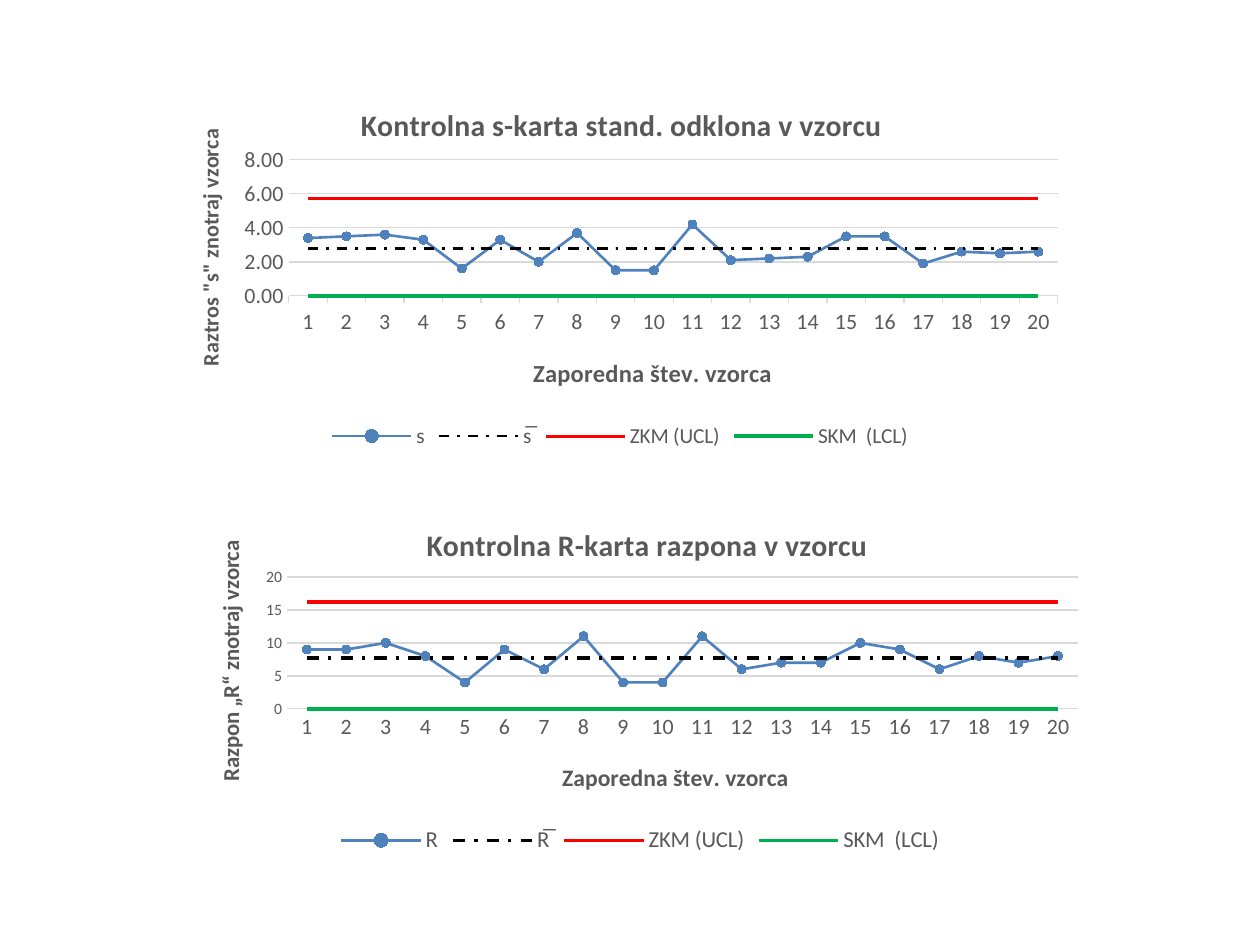
import dataclasses

import pptx
import pptx.chart.data
import pptx.dml.color
import pptx.enum.chart
import pptx.enum.dml
import pptx.oxml
import pptx.oxml.ns
import pptx.util

Pt = pptx.util.Pt
RGB = pptx.dml.color.RGBColor.from_string
XL = pptx.enum.chart


@dataclasses.dataclass(frozen=True)
class Theme:
    font: str = "Calibri"
    text: str = "595959"
    grid: str = "D9D9D9"
    sample: str = "4F81BD"
    mean: str = "000000"
    upper: str = "FF0000"
    lower: str = "00B050"
    title_size: float = 17
    category_size: float = 12.5
    hairline: float = 0.75
    marker_size: int = 5


THEME = Theme()
SAMPLES = [str(number) for number in range(1, 21)]

S_CARD = {
    "box": (93.6, 43.2, 521.3, 216),
    "plot": (0.137, 0.223, 0.843, 0.36),
    "title": ("Kontrolna s-karta stand. odklona v vzorcu", THEME.title_size, (0.21, 0.06)),
    "category_title": ("Zaporedna štev. vzorca", 14, (0.4, 0.73)),
    "value_title": ('Raztros "s" znotraj vzorca', 12.6, (0.03, 0.13)),
    "symbols": ("s", "s̅"),
    "values": [3.4, 3.5, 3.6, 3.3, 1.6, 3.3, 2, 3.7, 1.5, 1.5,
               4.2, 2.1, 2.2, 2.3, 3.5, 3.5, 1.9, 2.6, 2.5, 2.6],
    "limits": (2.8, 5.7, 0),
    "widths": (1.5, 1.5, 1.75, 2.5),
    "scale": {"minimum_scale": 0, "maximum_scale": 8, "major_unit": 2},
    "number_format": "0.00",
    "category_tick": XL.XL_TICK_MARK.OUTSIDE,
    "value_size": 12.5,
    "legend_size": 12.2,
}
R_CARD = {
    "box": (105.1, 281.5, 521.3, 209.5),
    "plot": (0.113, 0.23, 0.867, 0.36),
    "title": ("Kontrolna R-karta razpona v vzorcu", THEME.title_size, (0.26, 0.07)),
    "category_title": ("Zaporedna štev. vzorca", 13.5, (0.41, 0.72)),
    "value_title": ("Razpon „R“ znotraj vzorca", 13, (0.03, 0.12)),
    "symbols": ("R", "R̅"),
    "values": [9, 9, 10, 8, 4, 9, 6, 11, 4, 4, 11, 6, 7, 7, 10, 9, 6, 8, 7, 8],
    "limits": (7.7, 16.2, 0),
    "widths": (1.5, 1.75, 1.75, 2),
    "scale": {"minimum_scale": 0, "maximum_scale": 20, "major_unit": 5},
    "number_format": "General",
    "category_tick": XL.XL_TICK_MARK.NONE,
    "value_size": 9,
    "legend_size": 13,
}


def apply(target, formats):
    for attribute, value in formats.items():
        setattr(target, attribute, value)


def style_font(font, size, bold=False):
    apply(font, {"name": THEME.font, "size": Pt(size), "bold": bold})
    font.color.rgb = RGB(THEME.text)


def style_line(line, color, width):
    line.color.rgb = RGB(color)
    line.width = Pt(width)


def set_layout(element, index, fractions, inner=False):
    for old in element.findall(pptx.oxml.ns.qn("c:layout")):
        element.remove(old)
    parts = ["layoutTarget val='inner'"] if inner else []
    parts += ["xMode val='edge'", "yMode val='edge'"]
    parts += [f"{key} val='{value}'" for key, value in zip("xywh", fractions)]
    children = "".join(f"<c:{part}/>" for part in parts)
    element.insert(index, pptx.oxml.parse_xml(
        f"<c:layout {pptx.oxml.ns.nsdecls('c')}>"
        f"<c:manualLayout>{children}</c:manualLayout></c:layout>"))


def write_title(title, wording, rotation=0):
    text, size, position = wording
    frame = title.text_frame
    frame.text = text
    style_font(frame.paragraphs[0].runs[0].font, size, bold=True)
    body = frame._txBody.find(pptx.oxml.ns.qn("a:bodyPr"))
    body.set("rot", str(rotation))
    body.set("vert", "horz")
    set_layout(title._element, 1, position)


def style_axes(chart, card):
    category, value = chart.category_axis, chart.value_axis
    apply(category, {"major_tick_mark": card["category_tick"],
                     "minor_tick_mark": XL.XL_TICK_MARK.NONE})
    apply(value, {"major_tick_mark": XL.XL_TICK_MARK.NONE,
                  "minor_tick_mark": XL.XL_TICK_MARK.NONE,
                  "has_major_gridlines": True, **card["scale"]})
    apply(value.tick_labels, {"number_format": card["number_format"],
                              "number_format_is_linked": False})
    style_font(category.tick_labels.font, THEME.category_size)
    style_font(value.tick_labels.font, card["value_size"])
    style_line(category.format.line, THEME.grid, THEME.hairline)
    style_line(value.major_gridlines.format.line, THEME.grid, THEME.hairline)
    value.format.line.fill.background()
    write_title(category.axis_title, card["category_title"])
    write_title(value.axis_title, card["value_title"], rotation=-5400000)


def style_series(chart, widths):
    colors = (THEME.sample, THEME.mean, THEME.upper, THEME.lower)
    for series, color, width in zip(chart.plots[0].series, colors, widths):
        series.smooth = False
        style_line(series.format.line, color, width)
        series.marker.style = XL.XL_MARKER_STYLE.NONE
    measured, mean = list(chart.plots[0].series)[:2]
    mean.format.line.dash_style = pptx.enum.dml.MSO_LINE.DASH_DOT
    apply(measured.marker, {"style": XL.XL_MARKER_STYLE.CIRCLE,
                            "size": THEME.marker_size})
    measured.marker.format.fill.solid()
    measured.marker.format.fill.fore_color.rgb = RGB(THEME.sample)
    style_line(measured.marker.format.line, THEME.sample, THEME.hairline)


def add_control_card(slide, card):
    readings = pptx.chart.data.CategoryChartData()
    readings.categories = SAMPLES
    symbol, mean_symbol = card["symbols"]
    readings.add_series(symbol, card["values"])
    for name, limit in zip((mean_symbol, "ZKM (UCL)", "SKM  (LCL)"), card["limits"]):
        readings.add_series(name, [limit] * len(SAMPLES))
    chart = slide.shapes.add_chart(
        XL.XL_CHART_TYPE.LINE_MARKERS, *map(Pt, card["box"]), readings).chart
    apply(chart, {"has_title": True, "has_legend": True})
    chart.plots[0].vary_by_categories = False
    chart.font.name = THEME.font
    write_title(chart.chart_title, card["title"])
    chart.chart_title.include_in_layout = False
    apply(chart.legend, {"position": XL.XL_LEGEND_POSITION.BOTTOM,
                         "include_in_layout": False})
    style_font(chart.legend.font, card["legend_size"])
    style_axes(chart, card)
    style_series(chart, card["widths"])
    plot_area = chart._chartSpace.chart.plotArea
    set_layout(plot_area, 0, card["plot"], inner=True)


def main():
    deck = pptx.Presentation()
    apply(deck, {"slide_width": Pt(720), "slide_height": Pt(540)})
    slide = deck.slides.add_slide(deck.slide_layouts[6])
    for card in (S_CARD, R_CARD):
        add_control_card(slide, card)
    deck.save("out.pptx")


if __name__ == "__main__":
    main()
